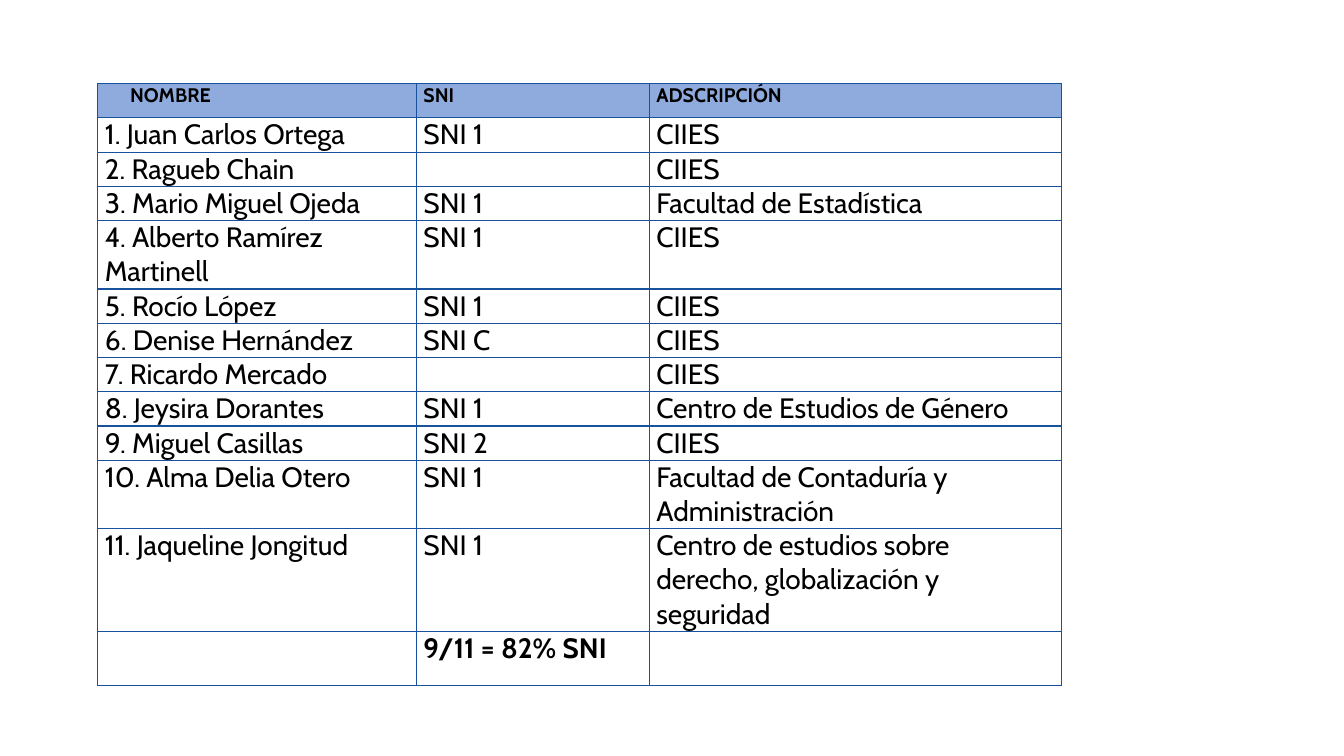
from dataclasses import dataclass

from lxml import etree
from pptx import Presentation
from pptx import util as u
from pptx.dml.color import RGBColor
from pptx.oxml.ns import qn


@dataclass(frozen=True)
class Theme:
    """Colours, font and type sizes of the slide."""
    font: str = "Cabin"
    ink: str = "000000"
    header: str = "8FAADC"
    border: str = "18529D"
    header_size: int = 14
    body_size: int = 20
    border_width: int = 1


class Page:
    """One slide drawn in a given theme."""

    def __init__(self, deck, theme):
        """Add a blank slide to the deck."""
        self.theme = theme
        self.slide = deck.slides.add_slide(deck.slide_layouts[6])

    def table(self, left, top, widths, heights, rows):
        """Draw a bordered table whose first row is the header."""
        table = self.slide.shapes.add_table(
            len(rows), len(widths), u.Inches(left), u.Inches(top),
            u.Inches(sum(widths)), u.Inches(sum(heights))).table
        table.horz_banding = False
        table.first_row = False
        for column, width in zip(table.columns, widths):
            column.width = u.Inches(width)
        for row, height in zip(table.rows, heights):
            row.height = u.Inches(height)
        last = len(rows) - 1
        for index, words in enumerate(rows):
            for position, word in enumerate(words):
                self.cell(table.cell(index, position), word,
                          header=index == 0, bold=index in (0, last))
        return table

    def cell(self, cell, words, header, bold):
        """Fill one cell with text, borders and background."""
        cell.margin_left = cell.margin_right = u.Inches(0.07)
        cell.margin_top = cell.margin_bottom = 0
        self.borders(cell)
        if header:
            cell.fill.solid()
            cell.fill.fore_color.rgb = RGBColor.from_string(self.theme.header)
        else:
            cell.fill.background()
        para = cell.text_frame.paragraphs[0]
        para.text = words
        font = para.font
        font.name = self.theme.font
        font.size = u.Pt(self.theme.header_size if header else self.theme.body_size)
        font.bold = bold
        font.color.rgb = RGBColor.from_string(self.theme.ink)

    def borders(self, cell):
        """Give a cell a solid line on all four sides."""
        properties = cell._tc.get_or_add_tcPr()
        for side in ("a:lnL", "a:lnR", "a:lnT", "a:lnB"):
            line = etree.SubElement(properties, qn(side),
                                    w=str(u.Pt(self.theme.border_width)))
            fill = etree.SubElement(line, qn("a:solidFill"))
            etree.SubElement(fill, qn("a:srgbClr"), val=self.theme.border)

    def indent(self, cell, inches):
        """Move the text of a cell to the right."""
        para = cell.text_frame.paragraphs[0]
        properties = para._p.get_or_add_pPr()
        properties.set("marL", str(u.Inches(inches)))
        properties.set("indent", "0")


MEMBERS = [
    ("Juan Carlos Ortega", "SNI 1", "CIIES"),
    ("Ragueb Chain", "", "CIIES"),
    ("Mario Miguel Ojeda", "SNI 1", "Facultad de Estadística"),
    ("Alberto Ramírez Martinell", "SNI 1", "CIIES"),
    ("Rocío López", "SNI 1", "CIIES"),
    ("Denise Hernández", "SNI C", "CIIES"),
    ("Ricardo Mercado", "", "CIIES"),
    ("Jeysira Dorantes", "SNI 1", "Centro de Estudios de Género"),
    ("Miguel Casillas", "SNI 2", "CIIES"),
    ("Alma Delia Otero", "SNI 1", "Facultad de Contaduría y Administración"),
    ("Jaqueline Jongitud", "SNI 1",
     "Centro de estudios sobre derecho, globalización y seguridad"),
]


def main():
    """Build the slide and save it."""
    deck = Presentation()
    deck.slide_width, deck.slide_height = u.Inches(13.33), u.Inches(7.5)
    page = Page(deck, Theme())
    rows = [("NOMBRE", "SNI", "ADSCRIPCIÓN")]
    rows += [(f"{number}. {name}", level, unit)
             for number, (name, level, unit) in enumerate(MEMBERS, 1)]
    rows.append(("", "9/11 = 82% SNI", ""))
    heights = [0.34] * 10 + [0.68] * 2 + [0.54]
    table = page.table(0.97, 0.83, (3.16, 2.31, 4.09), heights, rows)
    page.indent(table.cell(0, 0), 0.25)
    deck.save("out.pptx")


if __name__ == "__main__":
    main()
